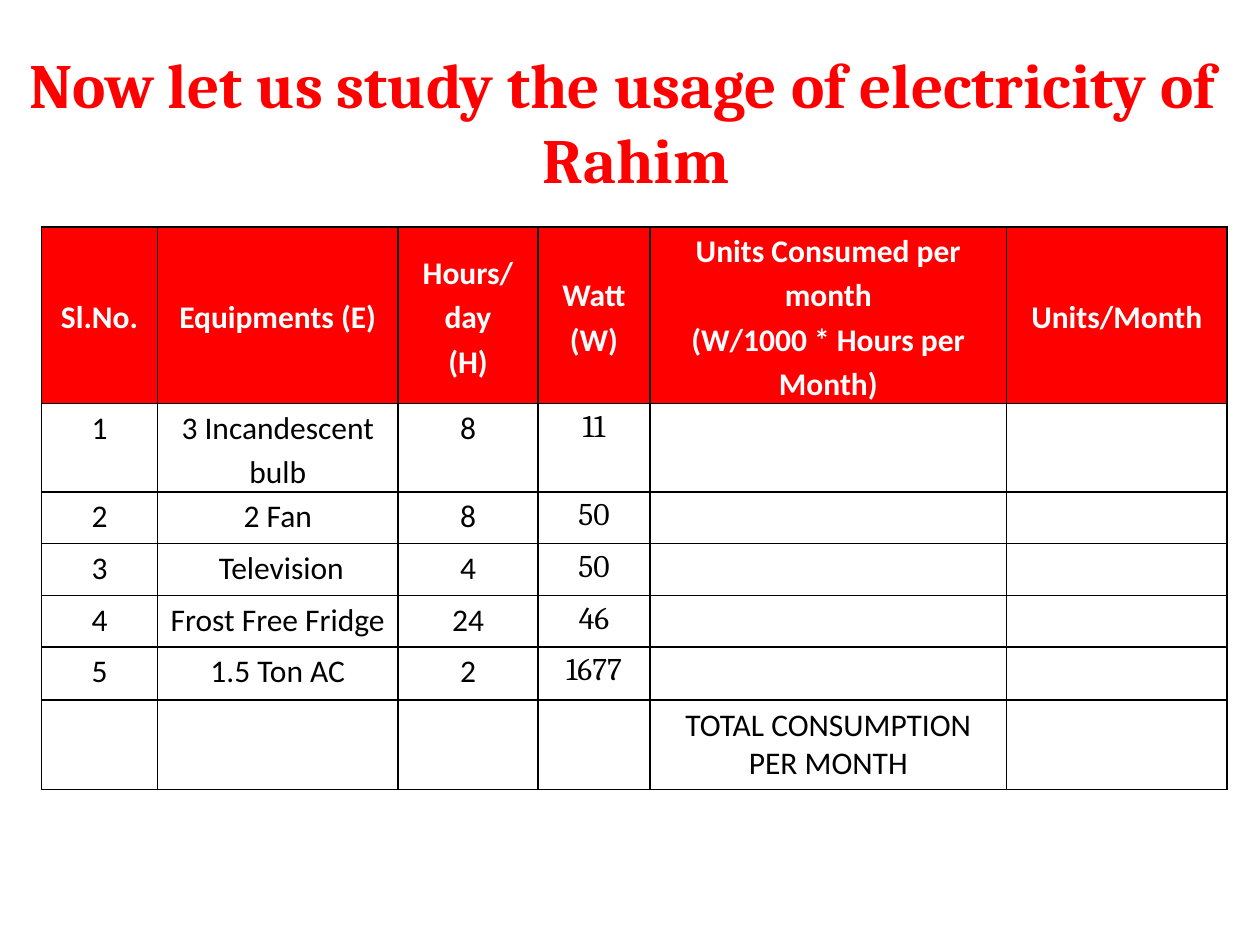
import pptx
import pptx.dml.color
import pptx.enum.text
import pptx.oxml
import pptx.oxml.ns
import pptx.util

RED = pptx.dml.color.RGBColor(0xFF, 0x00, 0x00)
WHITE = pptx.dml.color.RGBColor(0xFF, 0xFF, 0xFF)
BLACK = pptx.dml.color.RGBColor(0x00, 0x00, 0x00)
MIDDLE = pptx.enum.text.MSO_ANCHOR.MIDDLE
CENTER = pptx.enum.text.PP_ALIGN.CENTER

WIDTHS = [9.2, 19.1, 11.1, 8.9, 28.3, 17.5]
HEIGHTS = [13.7, 4.1, 4.1, 4.1, 4.1, 4.2, 7]
HEADS = ["Sl.No.", "Equipments (E)", "Hours/\nday\n(H)", "Watt (W)",
         "Units Consumed per month\n(W/1000 * Hours per Month)", "Units/Month"]
USAGE = [
    ("3 Incandescent bulb", "8", "11"),
    ("2 Fan", "8", "50"),
    (" Television", "4", "50"),
    ("Frost Free Fridge", "24", "46"),
    ("1.5 Ton AC", "2", "1677"),
]
TOTAL = ["", "", "", "", "TOTAL CONSUMPTION PER MONTH", ""]


class Deck:
    """Draws styled elements on a grid of 100 columns by 75 rows."""

    def __init__(self):
        self.show = pptx.Presentation()
        self.show.slide_width = pptx.util.Inches(10)
        self.show.slide_height = pptx.util.Inches(7.5)
        self.slide = self.show.slides.add_slide(self.show.slide_layouts[6])

    def across(self, cols):
        return round(self.show.slide_width * cols / 100)

    def down(self, rows):
        return round(self.show.slide_height * rows / 75)

    def place(self, left, top, width, height):
        return self.across(left), self.down(top), self.across(width), self.down(height)

    def label(self, frame, text, size, color, bold=False, face="Calibri", space=None):
        frame.text = text
        for para in frame.paragraphs:
            para.alignment = CENTER
            para.line_spacing = space
            para.font.size = pptx.util.Pt(size)
            para.font.name = face
            para.font.bold = bold
            para.font.color.rgb = color

    def title(self, text, *box):
        frame = self.slide.shapes.add_textbox(*self.place(*box)).text_frame
        frame.word_wrap = True
        frame.vertical_anchor = MIDDLE
        self.label(frame, text, 36, RED, True, "Cambria")

    def border(self, cell):
        props = cell._tc.get_or_add_tcPr()
        for side in ("lnL", "lnR", "lnT", "lnB"):
            props.append(pptx.oxml.parse_xml(
                f'<a:{side} {pptx.oxml.ns.nsdecls("a")} w="12700"><a:solidFill>'
                f'<a:srgbClr val="{BLACK}"/></a:solidFill></a:{side}>'))

    def trim(self, cell):
        cell.margin_left = cell.margin_right = pptx.util.Inches(0.07)
        cell.margin_top = cell.margin_bottom = 0

    def table(self, data, left, top):
        box = self.place(left, top, sum(WIDTHS), sum(HEIGHTS))
        grid = self.slide.shapes.add_table(len(data), len(WIDTHS), *box).table
        grid.first_row = grid.horz_banding = False
        for col, width in zip(grid.columns, WIDTHS):
            col.width = self.across(width)
        for row, height in zip(grid.rows, HEIGHTS):
            row.height = self.down(height)
        for r, texts in enumerate(data):
            head, last = r == 0, r == len(data) - 1
            for c, text in enumerate(texts):
                cell = grid.cell(r, c)
                self.border(cell)
                if head:
                    cell.fill.solid()
                    cell.fill.fore_color.rgb = RED
                    cell.vertical_anchor = MIDDLE
                else:
                    cell.fill.background()
                if text and not last:
                    self.trim(cell)
                face = "Cambria" if c == 3 and not head else "Calibri"
                self.label(cell.text_frame, text, 18, WHITE if head else BLACK,
                           head, face, 1.15 if text and not last else None)


def main():
    deck = Deck()
    rows = [[str(n), *use, "", ""] for n, use in enumerate(USAGE, 1)]
    deck.table([HEADS, *rows, TOTAL], 3.3, 18)
    deck.title("Now let us study the usage of electricity of \v Rahim",
               -1.7, 2.5, 103.3, 14.2)
    deck.show.save("out.pptx")


if __name__ == "__main__":
    main()
